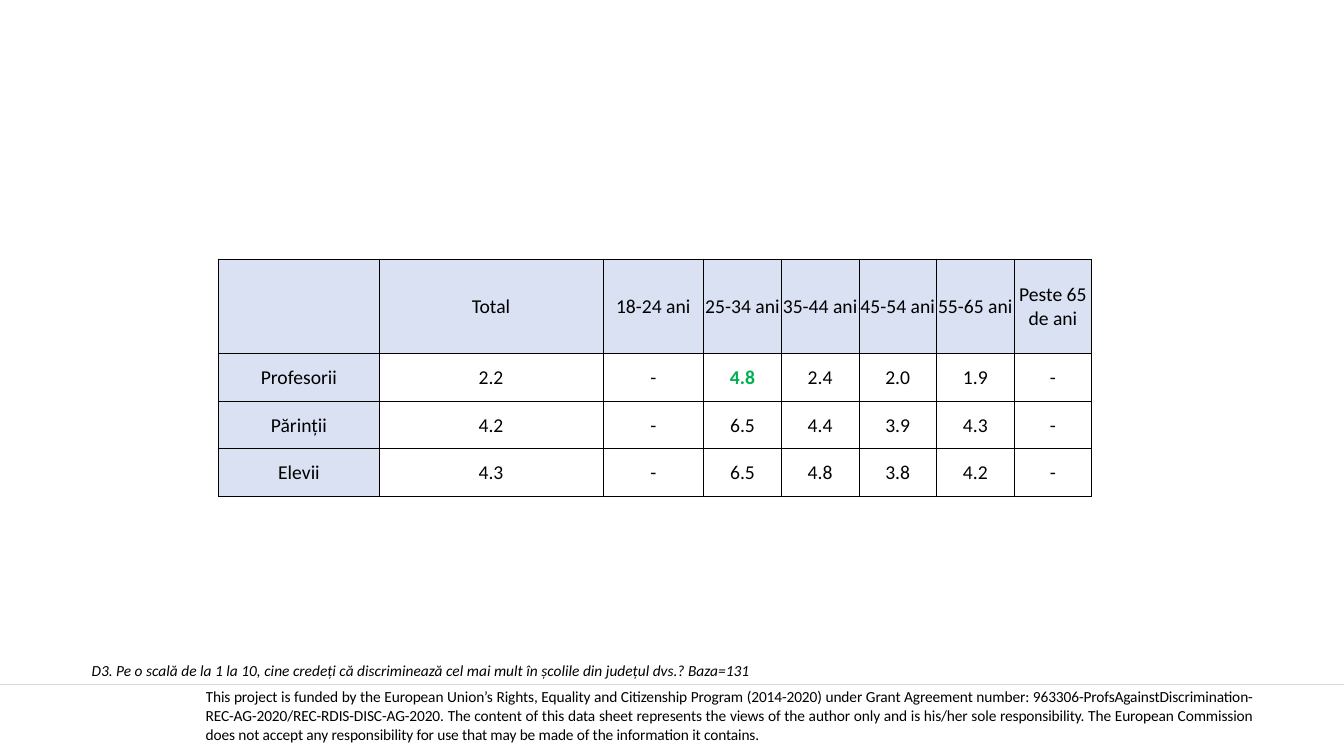
import pptx
import pptx.util
import pptx.dml.color
import pptx.enum.shapes
import pptx.enum.text
import pptx.oxml.ns
import lxml.etree

Inches = pptx.util.Inches
Pt = pptx.util.Pt
ALIGN = pptx.enum.text.PP_ALIGN
qn = pptx.oxml.ns.qn

COLORS = {
    "black": "000000",
    "score": "010205",
    "highlight": "00B050",
    "heading": "D9E1F2",
    "rule": "D9D9D9",
}


def add_text(paragraph, text, size, color, bold=False, italic=False):
    run = paragraph.add_run()
    run.text = text
    run.font.name = "Calibri"
    run.font.size = Pt(size)
    run.font.bold = bold
    run.font.italic = italic
    run.font.color.rgb = pptx.dml.color.RGBColor.from_string(COLORS[color])
    return run


def add_plain_table(left, top, widths, heights):
    frame = slide.shapes.add_table(
        len(heights), len(widths), Inches(left), Inches(top),
        Inches(sum(widths)), Inches(sum(heights)))
    table = frame.table
    table.first_row = False
    table.horz_banding = False
    for column, width in zip(table.columns, widths):
        column.width = Inches(width)
    for row, height in zip(table.rows, heights):
        row.height = Inches(height)
    for cell in table.iter_cells():
        cell.vertical_anchor = pptx.enum.text.MSO_ANCHOR.MIDDLE
        cell.margin_left = cell.margin_right = cell.margin_top = cell.margin_bottom = 0
    return table


prs = pptx.Presentation()
prs.slide_width = Inches(13.33)
prs.slide_height = Inches(7.5)
slide = prs.slides.add_slide(prs.slide_layouts[6])

funding = add_plain_table(2.04, 6.59, [10.39], [1.04]).cell(0, 0)
funding.fill.background()
statement = funding.text_frame.paragraphs[0]
statement.alignment = ALIGN.JUSTIFY
statement_run = add_text(
    statement,
    "This project is funded by the European Union’s Rights, Equality and Citizenship Program "
    "(2014-2020) under Grant Agreement number: 963306-ProfsAgainstDiscrimination-REC-AG-2020/"
    "REC-RDIS-DISC-AG-2020. The content of this data sheet represents the views of the author "
    "only and is his/her sole responsibility. The European Commission does not accept any "
    "responsibility for use that may be made of the information it contains.",
    11, "black")
statement_run.font._element.set("spc", "-10")

score_rows = [
    ["", "Total", "18-24 ani", "25-34 ani", "35-44 ani", "45-54 ani", "55-65 ani", "Peste 65 de ani"],
    ["Profesorii", "2.2", "-", "4.8", "2.4", "2.0", "1.9", "-"],
    ["Părinții", "4.2", "-", "6.5", "4.4", "3.9", "4.3", "-"],
    ["Elevii", "4.3", "-", "6.5", "4.8", "3.8", "4.2", "-"],
]
highlighted = (1, 3)
scores = add_plain_table(2.17, 2.57, [1.59, 2.22, 1] + [0.77] * 5, [0.94] + [0.47] * 3)
for r, score_row in enumerate(score_rows):
    for c, text in enumerate(score_row):
        cell = scores.cell(r, c)
        cell.margin_left = cell.margin_right = cell.margin_top = Inches(0.01)
        properties = cell._tc.get_or_add_tcPr()
        for side in ("a:lnL", "a:lnR", "a:lnT", "a:lnB"):
            border = lxml.etree.SubElement(properties, qn(side), w=str(Pt(0.5)))
            border_fill = lxml.etree.SubElement(border, qn("a:solidFill"))
            lxml.etree.SubElement(border_fill, qn("a:srgbClr"), val=COLORS["black"])
        is_heading = r == 0 or c == 0
        if is_heading:
            cell.fill.solid()
            cell.fill.fore_color.rgb = pptx.dml.color.RGBColor.from_string(COLORS["heading"])
        else:
            cell.fill.background()
        paragraph = cell.text_frame.paragraphs[0]
        paragraph.alignment = ALIGN.CENTER
        if text:
            is_highlighted = (r, c) == highlighted
            color = "highlight" if is_highlighted else "black" if is_heading else "score"
            add_text(paragraph, text, 14, color, bold=is_highlighted)

question = slide.shapes.add_textbox(Inches(0.81), Inches(6.51), Inches(7.12), Inches(0.29)).text_frame
question.word_wrap = True
question.auto_size = pptx.enum.text.MSO_AUTO_SIZE.SHAPE_TO_FIT_TEXT
add_text(
    question.paragraphs[0],
    "D3. Pe o scală de la 1 la 10, cine credeți că discriminează cel mai mult în școlile "
    "din județul dvs.? Baza=131",
    11, "black", italic=True)

footer_rule = slide.shapes.add_connector(
    pptx.enum.shapes.MSO_CONNECTOR.STRAIGHT, 0, Inches(6.79), Inches(13.33), Inches(6.79))
footer_rule.line.color.rgb = pptx.dml.color.RGBColor.from_string(COLORS["rule"])
footer_rule.line.width = Pt(0.5)
lxml.etree.SubElement(footer_rule._element.spPr, qn("a:effectLst"))

prs.save("out.pptx")
